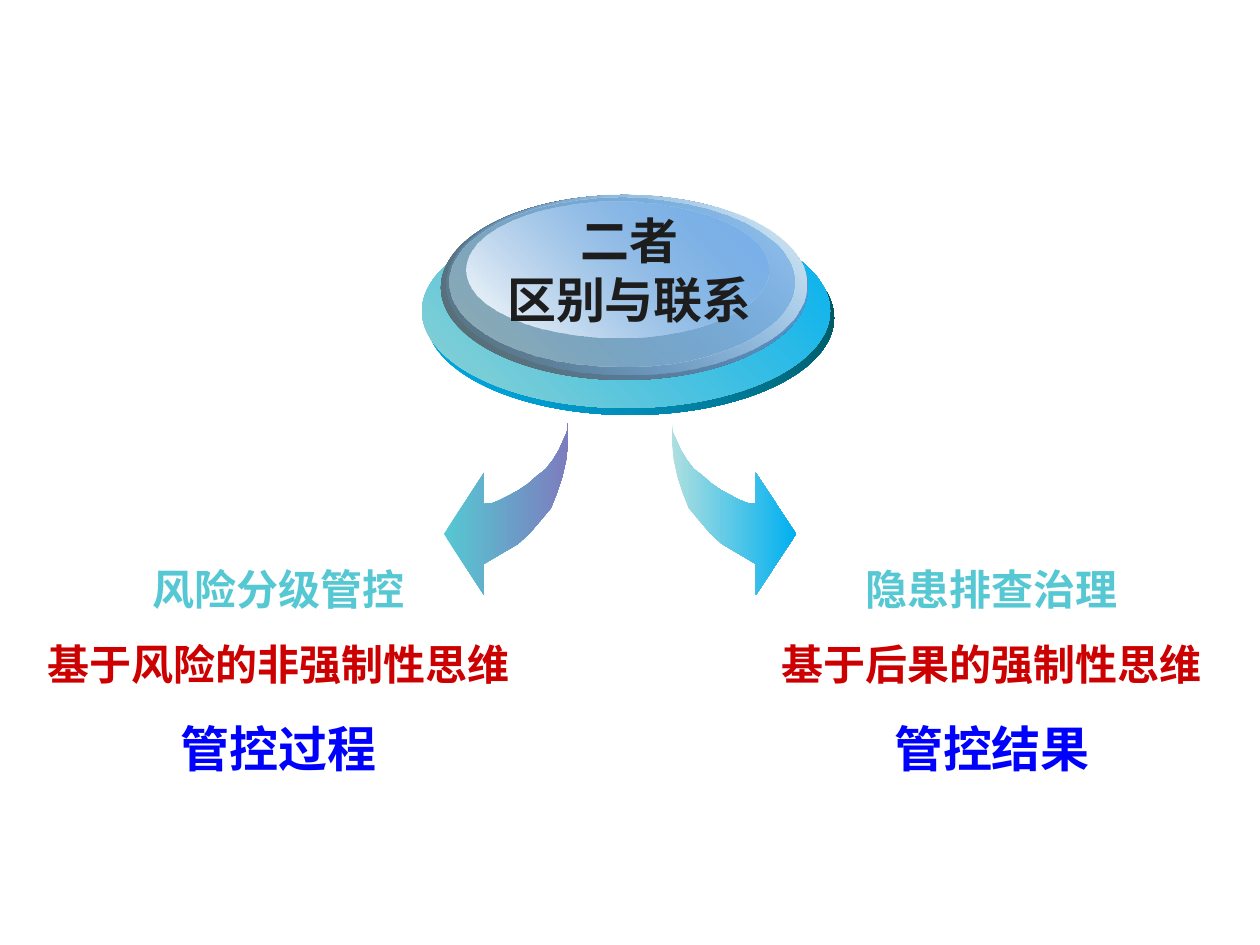
import pptx
import pptx.util
import pptx.dml.color
import pptx.enum.shapes
import pptx.enum.text
import lxml.etree

PX = 914400 / 126
FONT = "Noto Sans CJK SC"
NS = "{http://schemas.openxmlformats.org/drawingml/2006/main}"


def rgb(code):
    return pptx.dml.color.RGBColor.from_string(code)


def shade(shape, ends, angle):
    """Fill a shape with a two-stop gradient; each end is (colour, opacity %)."""
    shape.shadow.inherit = False
    shape.line.fill.background()
    shape.fill.gradient()
    shape.fill.gradient_angle = angle
    for stop, (code, alpha) in zip(shape.fill.gradient_stops, ends):
        stop.color.rgb = rgb(code)
    marks = shape._element.spPr.iter(NS + "srgbClr")
    for mark, (code, alpha) in zip(marks, ends):
        if alpha < 100:
            lxml.etree.SubElement(mark, NS + "alpha", val=str(alpha * 1000))


deck = pptx.Presentation()
deck.slide_width = pptx.util.Inches(10)
deck.slide_height = pptx.util.Inches(7.5)
slide = deck.slides.add_slide(deck.slide_layouts[6])

# Curved arrows: the right one mirrors the left one
curve = [
    (568, 423), (568, 444), (566, 461), (562, 478), (557, 493), (551, 508),
    (541, 520), (530, 533), (518, 544), (501, 554), (484, 564), (484, 595),
    (444, 534), (484, 473), (484, 504), (493, 503), (500, 500), (510, 495),
    (519, 490), (528, 484), (537, 476), (546, 469), (553, 460), (559, 450),
    (563, 441), (567, 432),
]
mirror = [(1240 - x, y) for x, y in curve]
arrows = [
    (curve, "56C8D3", "7D7DBE"),
    (mirror, "AEDFDF", "00B0F0"),
]
for points, start, end in arrows:
    pen = slide.shapes.build_freeform(*points[0], scale=PX)
    pen.add_line_segments(points[1:], close=True)
    shade(pen.convert_to_shape(), [(start, 100), (end, 100)], 0)

# Layered disc, from back to front
discs = [
    (426, 221, 408, 194, ("00B0F0", 100), ("004A4A", 100)),
    (422, 214, 408, 194, ("8ED2D2", 100), ("00B0F0", 100)),
    (441, 195, 367, 185, ("576869", 100), ("589EE9", 100)),
    (446, 195, 360, 180, ("589EE9", 0), ("E7F4F5", 100)),
    (450, 198, 344, 169, ("94B1B4", 100), ("589EE9", 48)),
    (467, 202, 302, 136, ("FFFFFF", 100), ("589EE9", 38)),
]
group = slide.shapes.add_group_shape()
for *place, start, end in discs:
    disc = group.shapes.add_shape(
        pptx.enum.shapes.MSO_SHAPE.OVAL, *[round(v * PX) for v in place])
    shade(disc, [start, end], 45)

# Title on the disc and the two columns: place, line spacing, lines
texts = [
    ((491, 204, 277, 160), None, [
        ("二者", 28, "1D1D1D"),
        ("区别与联系", 28, "1D1D1D")]),
    ((25, 532, 507, 328), 1.5, [
        ("风险分级管控", 24, "56C8D3"),
        ("基于风险的非强制性思维", 24, "CC0000"),
        ("管控过程", 28, "0000FF")]),
    ((759, 532, 466, 252), 1.5, [
        ("隐患排查治理", 24, "56C8D3"),
        ("基于后果的强制性思维", 24, "CC0000"),
        ("管控结果", 28, "0000FF")]),
]
for place, gap, lines in texts:
    frame = slide.shapes.add_textbox(*[round(v * PX) for v in place]).text_frame
    frame.word_wrap = True
    for i, (words, size, code) in enumerate(lines):
        para = frame.add_paragraph() if i else frame.paragraphs[0]
        para.alignment = pptx.enum.text.PP_ALIGN.CENTER
        para.line_spacing = gap
        run = para.add_run()
        run.text = words
        run.font.size = pptx.util.Pt(size)
        run.font.bold = True
        run.font.color.rgb = rgb(code)
        run.font.name = FONT
        lxml.etree.SubElement(run.font._element, NS + "ea", typeface=FONT)

deck.save("out.pptx")
